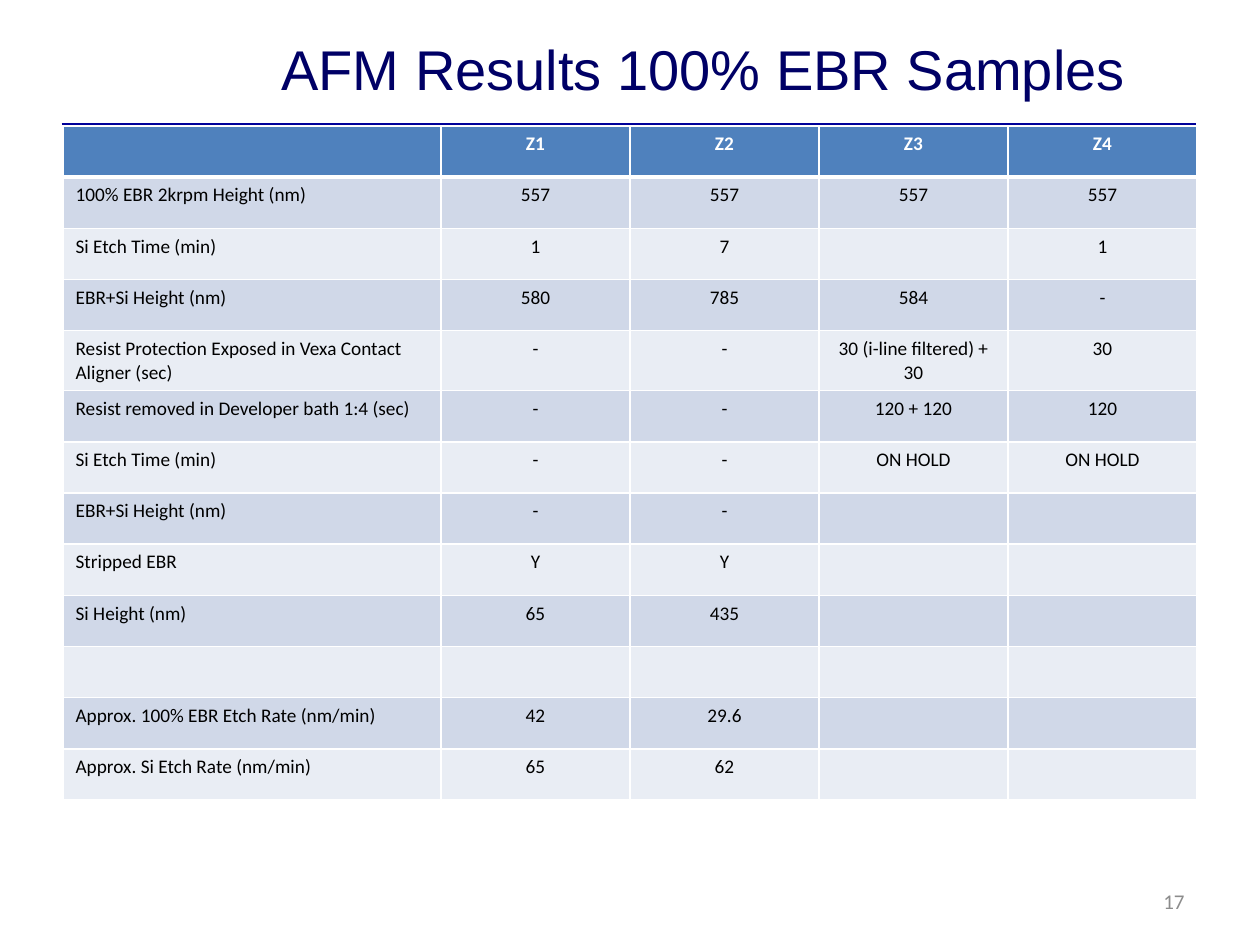
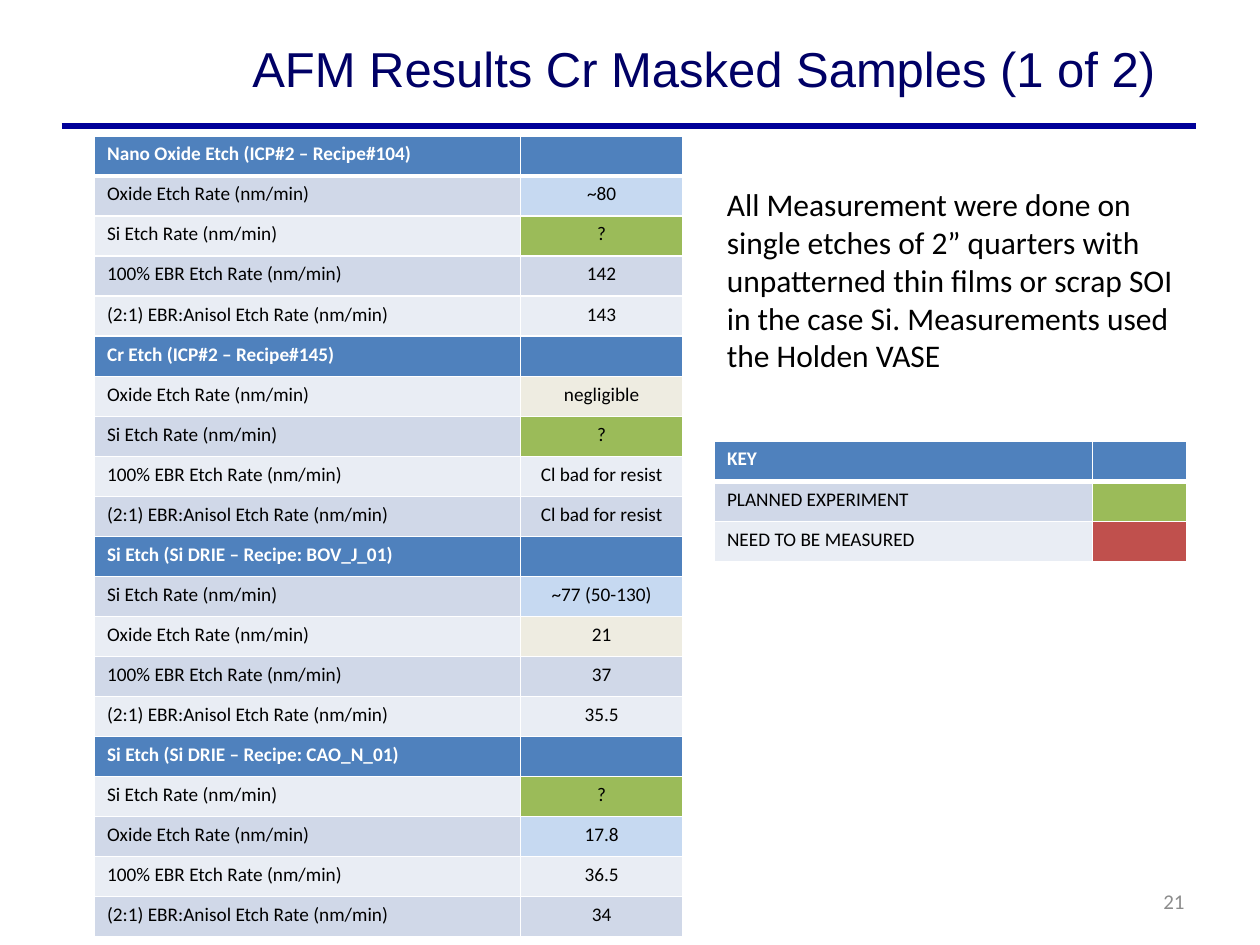
import lxml.etree
import pptx
import pptx.dml.color
import pptx.enum.shapes
import pptx.enum.text
import pptx.oxml.ns
import pptx.util

Inches = pptx.util.Inches
Pt = pptx.util.Pt
RGBColor = pptx.dml.color.RGBColor
Align = pptx.enum.text.PP_ALIGN
Anchor = pptx.enum.text.MSO_ANCHOR
AutoSize = pptx.enum.text.MSO_AUTO_SIZE
qn = pptx.oxml.ns.qn

# Shared colours and fonts
NAVY = RGBColor(0x00, 0x00, 0x66)
RULE_BLUE = RGBColor(0x00, 0x00, 0x99)
HEADER_BLUE = RGBColor(0x4F, 0x81, 0xBD)
BAND_DARK = RGBColor(0xD0, 0xD8, 0xE8)
BAND_LIGHT = RGBColor(0xE9, 0xED, 0xF4)
PALE_BLUE = RGBColor(0xC6, 0xD9, 0xF1)
CREAM = RGBColor(0xEE, 0xEC, 0xE1)
GREEN = RGBColor(0x9B, 0xBB, 0x59)
RED = RGBColor(0xC0, 0x50, 0x4D)
GREY = RGBColor(0x8C, 0x8C, 0x8C)
WHITE = RGBColor(0xFF, 0xFF, 0xFF)
BLACK = RGBColor(0x00, 0x00, 0x00)
TITLE_FONT = "Arial"
BODY_FONT = "Calibri"
CELL_SIZE = 11

# Results for each sample
SAMPLE_ROWS = [
    ["", "Z1", "Z2", "Z3", "Z4"],
    ["100% EBR 2krpm Height (nm)", "557", "557", "557", "557"],
    ["Si Etch Time (min)", "1", "7", "", "1"],
    ["EBR+Si Height (nm)", "580", "785", "584", "-"],
    ["Resist Protection Exposed in Vexa Contact Aligner (sec)",
     "-", "-", "30 (i-line filtered) + 30", "30"],
    ["Resist removed in Developer bath 1:4 (sec)", "-", "-", "120 + 120", "120"],
    ["Si Etch Time (min)", "-", "-", "ON HOLD", "ON HOLD"],
    ["EBR+Si Height (nm)", "-", "-", "", ""],
    ["Stripped EBR", "Y", "Y", "", ""],
    ["Si Height (nm)", "65", "435", "", ""],
    ["", "", "", "", ""],
    ["Approx. 100% EBR Etch Rate (nm/min)", "42", "29.6", "", ""],
    ["Approx. Si Etch Rate (nm/min)", "65", "62", "", ""],
]

# Etch recipes: heading, then material and rate; a pair gives a rate its own fill
OXIDE, SILICON, PURE, DILUTED = "Oxide", "Si", "100% EBR", "(2:1) EBR:Anisol"
RECIPES = [
    ("Nano Oxide Etch (ICP#2 – Recipe#104)",
     {OXIDE: ("~80", PALE_BLUE), SILICON: ("?", GREEN), PURE: "142", DILUTED: "143"}),
    ("Cr Etch (ICP#2 – Recipe#145)",
     {OXIDE: ("negligible", CREAM), SILICON: ("?", GREEN),
      PURE: "Cl bad for resist", DILUTED: "Cl bad for resist"}),
    ("Si Etch (Si DRIE – Recipe: BOV_J_01)",
     {SILICON: ("~77 (50-130)", PALE_BLUE), OXIDE: ("21", CREAM),
      PURE: "37", DILUTED: "35.5"}),
    ("Si Etch (Si DRIE – Recipe: CAO_N_01)",
     {SILICON: ("?", GREEN), OXIDE: ("17.8", PALE_BLUE), PURE: "36.5", DILUTED: "34"}),
]

KEY_ROWS = [
    ["KEY", ""],
    ["PLANNED EXPERIMENT", ("", GREEN)],
    ["NEED TO BE MEASURED", ("", RED)],
]


def add_span(para, text, size, color, font=BODY_FONT, bold=False):
    span = para.add_run()
    span.text = text
    span.font.name = font
    span.font.size = Pt(size)
    span.font.bold = bold
    span.font.color.rgb = color


def add_text(page, left, top, width, height, text, size, color,
             align=Align.LEFT, anchor=Anchor.TOP, grow=False):
    box = page.shapes.add_textbox(Inches(left), Inches(top), Inches(width), Inches(height))
    frame = box.text_frame
    frame.word_wrap = True
    frame.vertical_anchor = anchor
    frame.auto_size = AutoSize.SHAPE_TO_FIT_TEXT if grow else AutoSize.NONE
    para = frame.paragraphs[0]
    para.alignment = align
    add_span(para, text, size, color)


def add_title_rule(page):
    rule = page.shapes.add_connector(pptx.enum.shapes.MSO_CONNECTOR.STRAIGHT,
                                     Inches(0.49), Inches(1), Inches(9.49), Inches(1))
    rule.line.color.rgb = RULE_BLUE
    rule.line.width = Pt(3)
    lxml.etree.SubElement(rule._element.spPr, qn("a:effectLst"))


def add_page(deck, title, title_size, number):
    """Add a page with the title, rule and page number that all pages share."""
    page = deck.slides.add_slide(deck.slide_layouts[5])
    box = page.shapes.title
    box.left, box.top = Inches(1.67), Inches(0.08)
    box.width, box.height = Inches(7.83), Inches(0.92)
    frame = box.text_frame
    frame.auto_size = AutoSize.NONE
    frame.vertical_anchor = Anchor.MIDDLE
    para = frame.paragraphs[0]
    para.alignment = Align.CENTER
    add_span(para, title, title_size, NAVY, TITLE_FONT)
    add_title_rule(page)
    add_text(page, 7.17, 6.95, 2.33, 0.4, str(number), 12, GREY,
             Align.RIGHT, Anchor.MIDDLE)
    return page


def set_borders(cell, top, bottom):
    """Draw white cell borders; top and bottom are widths in points."""
    properties = cell._tc.get_or_add_tcPr()
    sides = {"lnL": 1, "lnR": 1, "lnT": top, "lnB": bottom}
    for position, (side, width) in enumerate(sides.items()):
        line = lxml.etree.Element(qn("a:" + side), w=str(Pt(width)))
        fill = lxml.etree.SubElement(line, qn("a:solidFill"))
        lxml.etree.SubElement(fill, qn("a:srgbClr"), val=str(WHITE))
        properties.insert(position, line)


def fill_cell(cell, text, fill, centred, heading):
    cell.fill.solid()
    cell.fill.fore_color.rgb = fill
    para = cell.text_frame.paragraphs[0]
    para.alignment = Align.CENTER if centred else Align.LEFT
    if text:
        add_span(para, text, CELL_SIZE, WHITE if heading else BLACK, bold=heading)
    else:
        lxml.etree.SubElement(para._p, qn("a:endParaRPr"), sz=str(CELL_SIZE * 100))


def add_banded_table(page, left, top, widths, height, rows, heading_rows=(0,)):
    table = page.shapes.add_table(len(rows), len(widths), Inches(left), Inches(top),
                                  Inches(sum(widths)), Inches(height)).table
    for column, width in zip(table.columns, widths):
        column.width = Inches(width)
    for row_index, row in enumerate(rows):
        table.rows[row_index].height = Inches(height / len(rows))
        heading = row_index in heading_rows
        band = HEADER_BLUE if heading else (BAND_LIGHT, BAND_DARK)[row_index % 2]
        for column_index, value in enumerate(row):
            text, fill = value if isinstance(value, tuple) else (value, band)
            cell = table.cell(row_index, column_index)
            fill_cell(cell, text, fill, column_index > 0, heading)
            set_borders(cell, top=3 if row_index == 1 else 1,
                        bottom=3 if row_index == 0 else 1)


def build_sample_page(deck):
    page = add_page(deck, "AFM Results 100% EBR Samples", 32, 17)
    add_banded_table(page, 0.5, 1, [3] + [1.5] * 4, 5.28, SAMPLE_ROWS)


def build_recipe_page(deck):
    page = add_page(deck, "AFM Results Cr Masked Samples (1 of 2)", 28, 21)

    # Etch rates, one section for each recipe
    rows, heading_rows = [], []
    for heading, rates in RECIPES:
        heading_rows.append(len(rows))
        rows.append([heading, ""])
        rows += [[f"{material} Etch Rate (nm/min)", rate]
                 for material, rate in rates.items()]
    add_banded_table(page, 0.75, 1.08, [3.38, 1.29], 6.36, rows, heading_rows)

    # Measurement note and colour key
    add_text(page, 5.67, 1.42, 3.75, 1.62,
             "All Measurement were done on single etches of 2” quarters with "
             "unpatterned thin films or scrap SOI in the case Si. "
             "Measurements used the Holden VASE", 18, BLACK, grow=True)
    add_banded_table(page, 5.67, 3.5, [3, 0.75], 0.96, KEY_ROWS)


def main():
    deck = pptx.Presentation()
    deck.slide_width, deck.slide_height = Inches(10), Inches(7.5)
    build_sample_page(deck)
    build_recipe_page(deck)
    deck.save("out.pptx")


if __name__ == "__main__":
    main()
